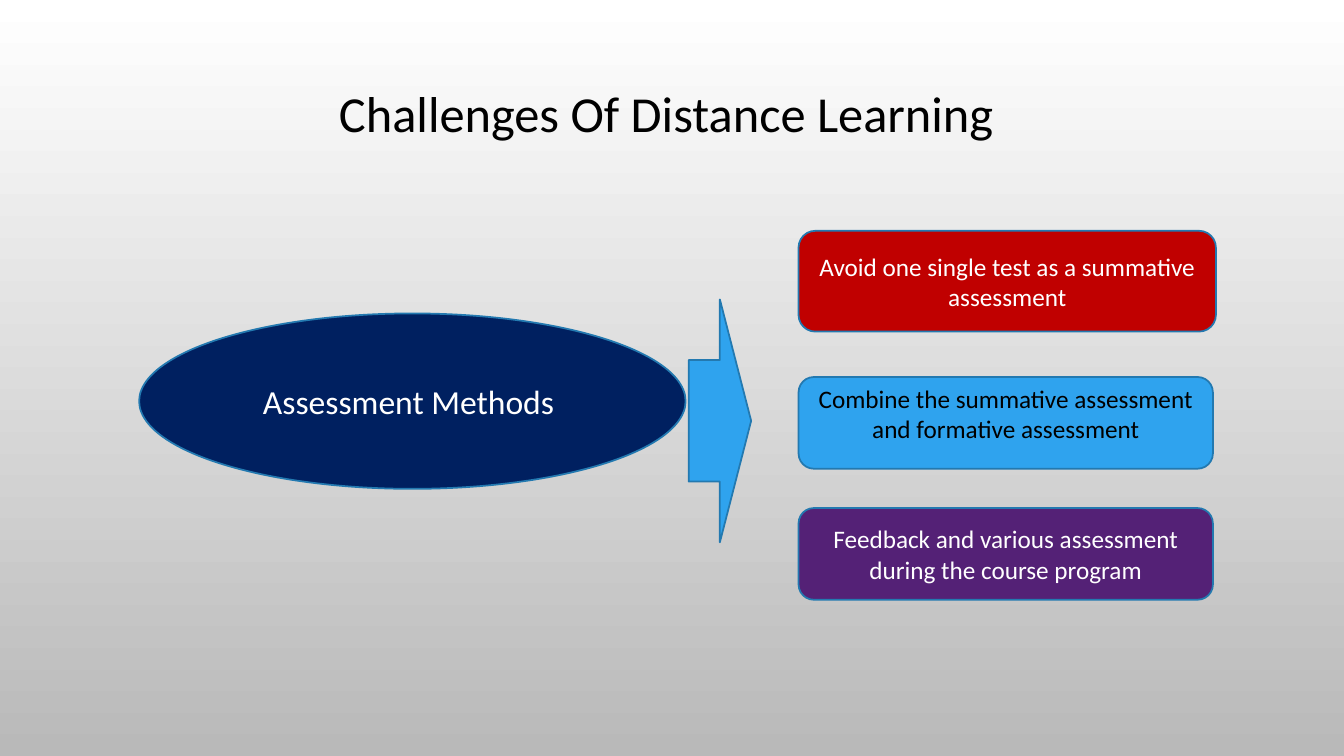
from pptx import Presentation
from pptx.dml.color import RGBColor
from pptx.enum.shapes import MSO_SHAPE
from pptx.enum.text import MSO_ANCHOR, PP_ALIGN
from pptx.util import Inches, Pt

# Colours
WHITE = RGBColor(0xFF, 0xFF, 0xFF)
BLACK = RGBColor(0x00, 0x00, 0x00)
GREY = RGBColor(0xB9, 0xB9, 0xB9)
NAVY = RGBColor(0x00, 0x20, 0x60)
RED = RGBColor(0xC0, 0x00, 0x00)
BLUE = RGBColor(0x2F, 0xA3, 0xEE)
PURPLE = RGBColor(0x54, 0x21, 0x76)
OUTLINE = RGBColor(0x23, 0x79, 0xB0)

# Content
TITLE = "Challenges Of Distance Learning "
TOPIC = "Assessment Methods "
# text, fill, text colour, anchor, (top, width, height)
METHODS = [
    ("Avoid one single test as a summative assessment",
     RED, WHITE, MSO_ANCHOR.MIDDLE, (2.29, 4.14, 1)),
    ("Combine the summative assessment and formative assessment",
     BLUE, BLACK, MSO_ANCHOR.TOP, (3.74, 4.11, 0.91)),
    ("Feedback and various assessment during the course program",
     PURPLE, WHITE, MSO_ANCHOR.MIDDLE, (5.04, 4.11, 0.91)),
]
METHODS_LEFT = 7.92


def write(shape, text, size=18, color=WHITE, anchor=MSO_ANCHOR.MIDDLE, spacing=1.0):
    frame = shape.text_frame
    frame.word_wrap = True
    frame.vertical_anchor = anchor
    if anchor == MSO_ANCHOR.TOP:
        frame.margin_top = Inches(0.02)
    para = frame.paragraphs[0]
    para.alignment = PP_ALIGN.CENTER
    para.line_spacing = spacing
    span = para.add_run()
    span.text = text
    span.font.name = "Calibri"
    span.font.size = Pt(size)
    span.font.color.rgb = color


def add_block(page, kind, fill, left, top, width, height):
    shape = page.shapes.add_shape(
        kind, Inches(left), Inches(top), Inches(width), Inches(height))
    shape.shadow.inherit = False
    shape.fill.solid()
    shape.fill.fore_color.rgb = fill
    shape.line.color.rgb = OUTLINE
    shape.line.width = Pt(1.25)
    return shape


def main():
    deck = Presentation()
    deck.slide_width, deck.slide_height = Inches(13.33), Inches(7.5)
    page = deck.slides.add_slide(deck.slide_layouts[5])

    # Background, white at the top to grey at the bottom
    backdrop = page.background.fill
    backdrop.gradient()
    backdrop.gradient_angle = 270
    for stop, color, position in zip(backdrop.gradient_stops, (WHITE, GREY), (0, 1)):
        stop.color.rgb = color
        stop.position = position

    # Title
    title = page.shapes.title
    title.left, title.top = Inches(1), Inches(0.68)
    title.width, title.height = Inches(11.33), Inches(0.95)
    write(title, TITLE, size=36, color=BLACK, spacing=0.9)

    # Topic and arrow
    topic = add_block(page, MSO_SHAPE.OVAL, NAVY, 1.38, 3.11, 5.42, 1.74)
    write(topic, TOPIC, size=24)
    add_block(page, MSO_SHAPE.RIGHT_ARROW, BLUE, 6.83, 2.97, 0.62, 2.41)

    # Methods
    for text, fill, color, anchor, (top, width, height) in METHODS:
        box = add_block(page, MSO_SHAPE.ROUNDED_RECTANGLE, fill,
                        METHODS_LEFT, top, width, height)
        write(box, text, color=color, anchor=anchor)

    deck.save("out.pptx")


if __name__ == "__main__":
    main()
